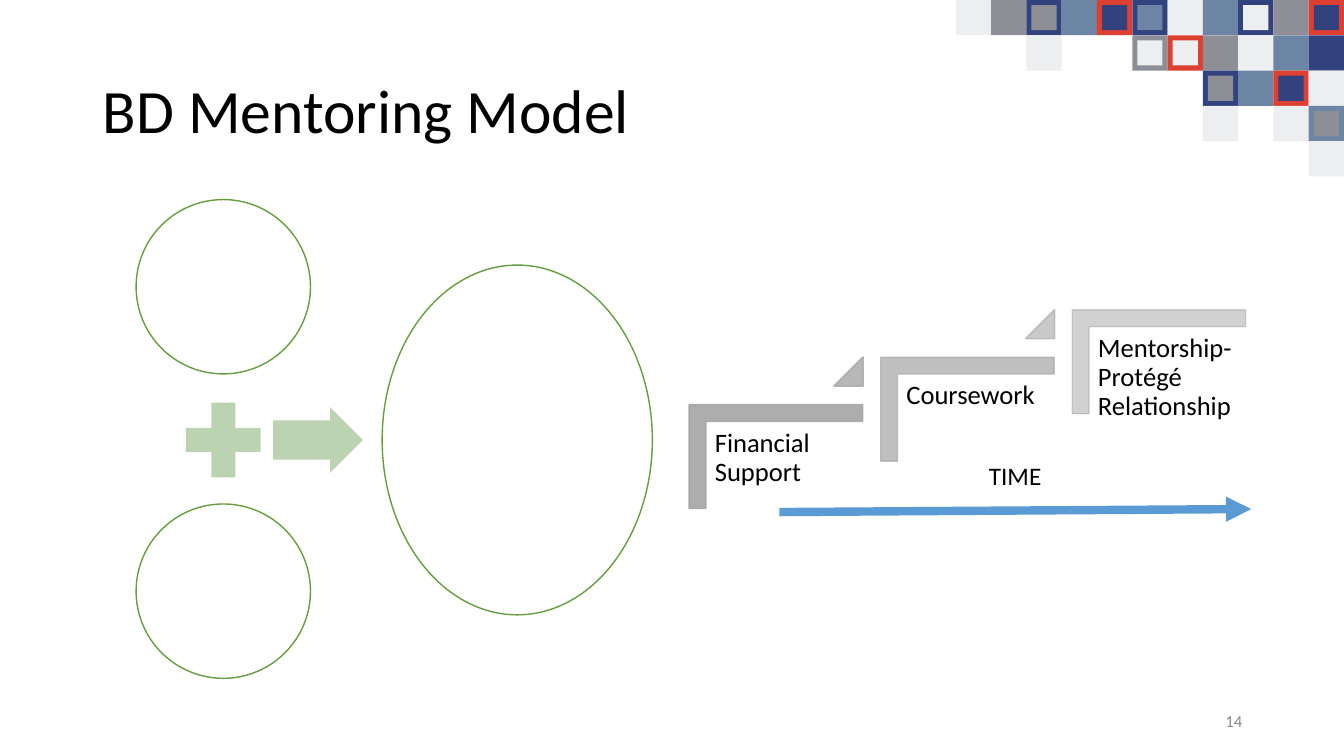
import pptx
import pptx.util
import pptx.dml.color
import pptx.enum.shapes
import pptx.enum.text
import pptx.oxml
import pptx.oxml.ns
from pptx.util import Inches

SHAPE = pptx.enum.shapes.MSO_SHAPE
ALIGN = pptx.enum.text.PP_ALIGN
ANCHOR = pptx.enum.text.MSO_ANCHOR
AUTO = pptx.enum.text.MSO_AUTO_SIZE
qn = pptx.oxml.ns.qn

GREEN, PALE_GREEN, GRAY, BLUE = "669D40", "BBD3B1", "A5A5A5", "5B9BD5"
TILE_COLORS = {"L": "EDEEEF", "G": "8E8F96", "N": "32427E",
               "B": "6C85A4", "R": "DD3F30"}
# One entry per tile: outer colour, then the inner square's colour if any.
TILE_ROWS = [
    "L G NG B RN NB L B NL G RN",
    ". . L . . GL RL G L B N",
    ". . . . . . . NG B RN L",
    ". . . . . . . L . L BG",
    ". . . . . . . . . . L",
]


def rgb(color):
    return pptx.dml.color.RGBColor.from_string(color)


def write(tf, text, size, color="000000", align=ALIGN.LEFT, anchor=ANCHOR.TOP,
          spacing=1.0, wrap=True, auto=AUTO.NONE, inset=None):
    tf.auto_size = auto
    tf.word_wrap = wrap
    tf.vertical_anchor = anchor
    if inset is not None:
        tf.margin_left = tf.margin_right = Inches(inset)
        tf.margin_top = tf.margin_bottom = Inches(inset)
    p = tf.paragraphs[0]
    p.alignment = align
    p.line_spacing = spacing
    r = p.add_run()
    r.text = text
    r.font.size = pptx.util.Pt(size)
    r.font.name = "Calibri"
    r.font.color.rgb = rgb(color)


def add_text(s, x, y, w, h, text, size, **fmt):
    sp = s.shapes.add_textbox(Inches(x), Inches(y), Inches(w), Inches(h))
    write(sp.text_frame, text, size, **fmt)


def add_shape(s, kind, x, y, w, h, fill, line=None, alpha=100, adj=(), rotation=0):
    sp = s.shapes.add_shape(kind, Inches(x), Inches(y), Inches(w), Inches(h))
    sp.shadow.inherit = False
    sp.rotation = rotation
    for i, value in enumerate(adj):
        sp.adjustments[i] = value
    sp.fill.solid()
    sp.fill.fore_color.rgb = rgb(fill)
    if line:
        sp.line.color.rgb = rgb(line)
        sp.line.width = pptx.util.Pt(1)
    else:
        sp.line.fill.background()
    if alpha < 100:
        for clr in sp._element.spPr.iter(qn("a:srgbClr")):
            clr.append(pptx.oxml.parse_xml(
                f'<a:alpha {pptx.oxml.ns.nsdecls("a")} val="{alpha * 1000}"/>'))


def add_arrow(s, x1, y1, x2, y2, color, width):
    c = s.shapes.add_connector(pptx.enum.shapes.MSO_CONNECTOR.STRAIGHT,
                               Inches(x1), Inches(y1), Inches(x2), Inches(y2))
    c.line.color.rgb = rgb(color)
    c.line.width = pptx.util.Pt(width)
    ns = pptx.oxml.ns.nsdecls("a")
    c.line._get_or_add_ln().append(
        pptx.oxml.parse_xml(f'<a:tailEnd {ns} type="triangle"/>'))
    c._element.spPr.append(pptx.oxml.parse_xml(f"<a:effectLst {ns}/>"))


def add_equation(s):
    """Two circles joined by a plus, leading to a large ellipse."""
    for x, y, w, h in [(1.35, 1.98, 1.73, 1.73), (1.35, 5, 1.73, 1.73),
                       (3.79, 2.63, 2.68, 3.47)]:
        add_shape(s, SHAPE.OVAL, x, y, w, h, "FFFFFF", line=GREEN)
    add_shape(s, SHAPE.MATH_PLUS, 1.71, 3.86, 1.01, 1.01, PALE_GREEN)
    add_shape(s, SHAPE.RIGHT_ARROW, 2.71, 4.04, 0.89, 0.65, PALE_GREEN, adj=(0.6, 0.5))


def add_steps(s, labels):
    """Rising steps that fade, with a triangle between neighbours."""
    for i, label in enumerate(labels):
        dx, dy, alpha = 1.9 * i, -0.47 * i, 90 - 20 * i
        add_shape(s, SHAPE.CORNER, 7.18 + dx, 3.67 + dy, 1.03, 1.72, GRAY,
                  line=GRAY, alpha=alpha, adj=(0.161, 0.161), rotation=90)
        add_text(s, 7.01 + dx, 4.18 + dy, 1.55, 1.36, label, 19,
                 spacing=0.9, inset=0.08)
        if i < len(labels) - 1:
            add_shape(s, SHAPE.ISOSCELES_TRIANGLE, 8.27 + dx, 3.54 + dy, 0.29, 0.29,
                      GRAY, line=GRAY, alpha=alpha - 10, adj=(1,))


def add_tiles(s):
    tile, border = 0.35, 0.05
    for row, codes in enumerate(TILE_ROWS):
        for col, code in enumerate(codes.split()):
            if code == ".":
                continue
            for depth, key in enumerate(code):
                inset = border * depth
                side = tile - 2 * inset
                add_shape(s, SHAPE.RECTANGLE, 9.48 + tile * col + inset,
                          tile * row + inset, side, side, TILE_COLORS[key])


def main():
    prs = pptx.Presentation()
    prs.slide_width, prs.slide_height = Inches(13.33), Inches(7.5)
    s = prs.slides.add_slide(prs.slide_layouts[5])

    title = s.shapes.title
    title.left, title.top = Inches(0.92), Inches(0.4)
    title.width, title.height = Inches(11.5), Inches(1.45)
    write(title.text_frame, "BD Mentoring Model", 44, anchor=ANCHOR.MIDDLE, spacing=0.9)

    add_equation(s)
    add_steps(s, ["Financial Support", "Coursework", "Mentorship-Protégé Relationship"])
    add_arrow(s, 7.73, 5.08, 12.41, 5.05, BLUE, 6)
    add_text(s, 9.71, 4.52, 0.73, 0.4, "TIME", 18, wrap=False, auto=AUTO.SHAPE_TO_FIT_TEXT)
    add_text(s, 9.42, 6.95, 3, 0.4, "14", 12, color="8C8C8C",
             align=ALIGN.RIGHT, anchor=ANCHOR.MIDDLE)
    add_tiles(s)
    prs.save("out.pptx")


if __name__ == "__main__":
    main()
